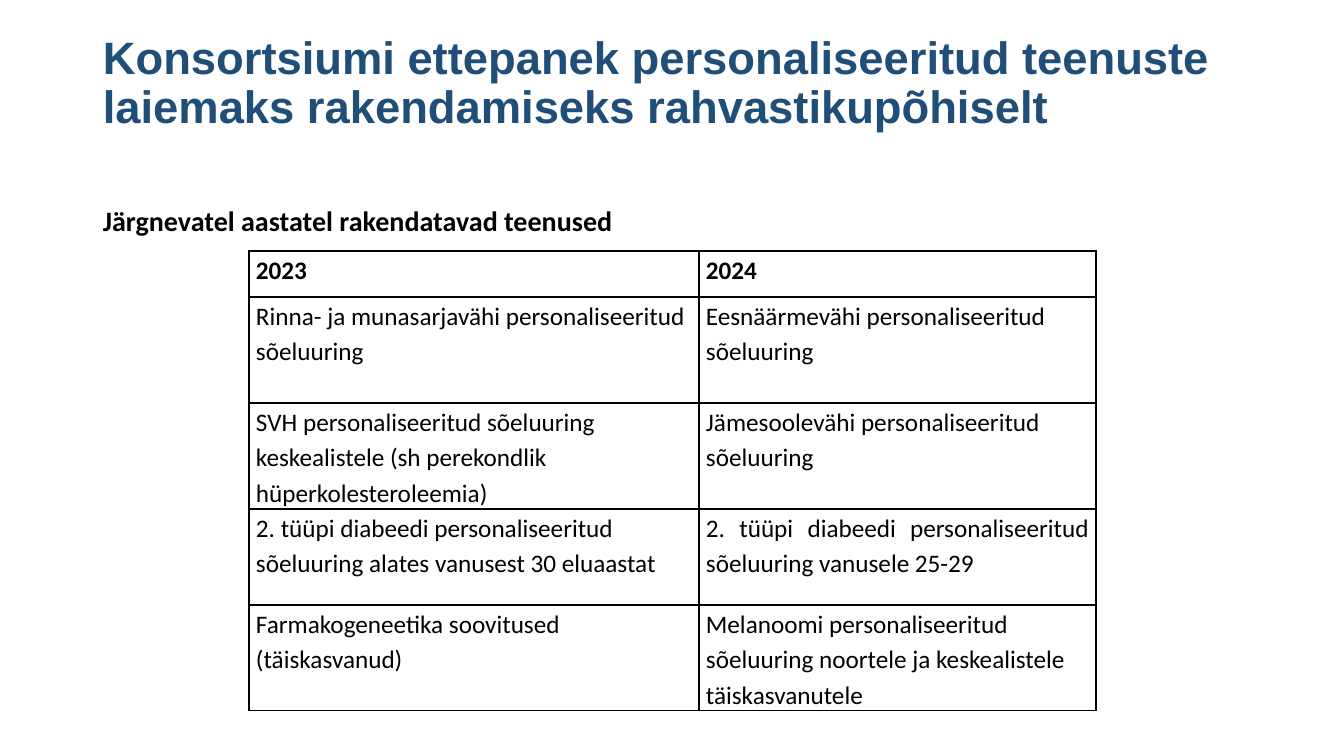
"""Build the slide on proposed personalised health services for 2023 and 2024."""
from lxml.etree import SubElement
from pptx import Presentation
from pptx.dml.color import RGBColor
from pptx.enum.text import MSO_ANCHOR, PP_ALIGN as Align
from pptx.oxml.ns import qn
from pptx.util import Pt

PX = 9071
NAVY = RGBColor(0x1F, 0x4E, 0x79)
BLACK = RGBColor(0, 0, 0)

TITLE = "Konsortsiumi ettepanek personaliseeritud teenuste laiemaks rakendamiseks rahvastikupõhiselt"
SUBTITLE = "Järgnevatel aastatel rakendatavad teenused"
SERVICES = [
    ("2023", "2024"),
    ("Rinna- ja munasarjavähi personaliseeritud sõeluuring",
     "Eesnäärmevähi personaliseeritud sõeluuring"),
    ("SVH personaliseeritud sõeluuring keskealistele (sh perekondlik hüperkolesteroleemia)",
     "Jämesoolevähi personaliseeritud sõeluuring"),
    ("2. tüüpi diabeedi personaliseeritud sõeluuring alates vanusest 30 eluaastat",
     "2. tüüpi diabeedi personaliseeritud sõeluuring vanusele 25-29"),
    ("Farmakogeneetika soovitused (täiskasvanud)",
     "Melanoomi personaliseeritud sõeluuring noortele ja keskealistele täiskasvanutele"),
]
COLUMN_WIDTHS = (450, 397)
ROW_HEIGHTS = (46, 106, 106, 96, 106)
JUSTIFIED = {(0, 0), (0, 1), (3, 1)}


def px(length):
    """Turn pixels into EMU."""
    return length * PX


def style_paragraph(para, font_name, size, color, bold, spacing):
    """Set the font and line spacing of a paragraph."""
    font = para.font
    font.name, font.size, font.bold = font_name, Pt(size), bold
    font.color.rgb = color
    para.line_spacing = spacing


def add_heading(page, text, bounds, font_name, size, color, top_inset):
    """Add a bold, wrapped heading in a text box."""
    frame = page.shapes.add_textbox(*map(px, bounds)).text_frame
    frame.word_wrap = True
    frame.margin_top = px(top_inset)
    frame.text = text
    style_paragraph(frame.paragraphs[0], font_name, size, color, True, 0.9)


def add_borders(cell):
    """Draw a thin black line on every side of a cell."""
    properties = cell._tc.get_or_add_tcPr()
    for side in ("a:lnL", "a:lnR", "a:lnT", "a:lnB"):
        line = SubElement(properties, qn(side), w=str(Pt(1)))
        fill = SubElement(line, qn("a:solidFill"))
        SubElement(fill, qn("a:srgbClr"), val=str(BLACK))


def fill_cell(cell, text, bold, align):
    """Write and style one table cell."""
    add_borders(cell)
    cell.fill.background()
    cell.margin_left = cell.margin_right = px(7)
    cell.margin_top = cell.margin_bottom = 0
    cell.vertical_anchor = MSO_ANCHOR.TOP
    cell.text = text
    para = cell.text_frame.paragraphs[0]
    para.alignment = align
    para.space_before = Pt(6)
    style_paragraph(para, "Calibri", 18, BLACK, bold, 1.15)


def add_services(page, left, top):
    """Add the table of services by year."""
    bounds = (left, top, sum(COLUMN_WIDTHS), sum(ROW_HEIGHTS))
    table = page.shapes.add_table(
        len(ROW_HEIGHTS), len(COLUMN_WIDTHS), *map(px, bounds)).table
    table.first_row = table.horz_banding = False
    for column, width in zip(table.columns, COLUMN_WIDTHS):
        column.width = px(width)
    for row, height in zip(table.rows, ROW_HEIGHTS):
        row.height = px(height)
    for row, texts in enumerate(SERVICES):
        for column, text in enumerate(texts):
            align = Align.JUSTIFY if (row, column) in JUSTIFIED else Align.LEFT
            fill_cell(table.cell(row, column), text, row == 0, align)


def main():
    """Build and save the deck."""
    deck = Presentation()
    deck.slide_width, deck.slide_height = px(1344), px(756)
    page = deck.slides.add_slide(deck.slide_layouts[6])
    add_heading(page, TITLE, (93, 35, 1159, 146), "Arial", 32.4, NAVY, 0)
    add_heading(page, SUBTITLE, (93, 202, 1159, 480), "Calibri", 20, BLACK, 5)
    add_services(page, 249, 251)
    deck.save("out.pptx")


if __name__ == "__main__":
    main()
